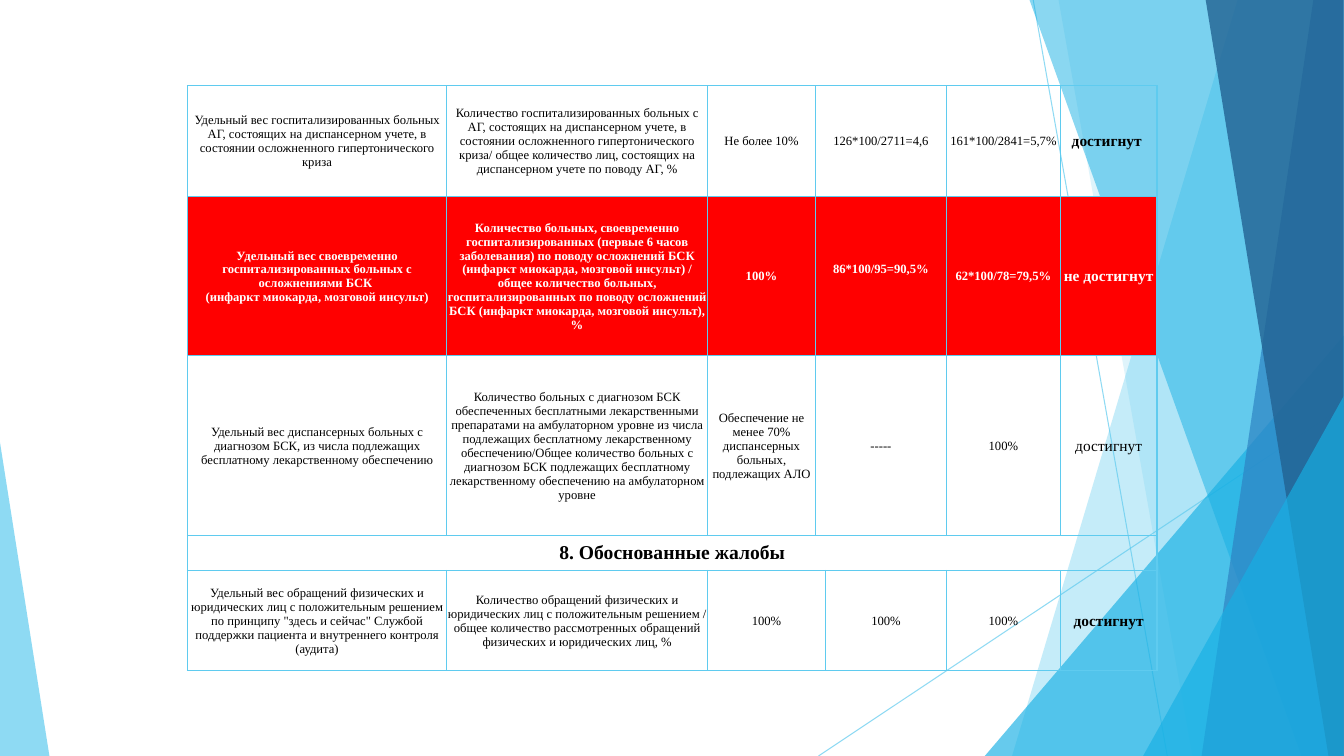
from dataclasses import dataclass

from lxml.etree import SubElement
from pptx import Presentation
from pptx.dml.color import RGBColor
from pptx.enum.shapes import MSO_CONNECTOR as Connector, MSO_SHAPE as Preset
from pptx.enum.text import MSO_ANCHOR as Anchor, PP_ALIGN as Align
from pptx.oxml import parse_xml
from pptx.oxml.ns import nsdecls, qn
from pptx.util import Inches, Pt


@dataclass(frozen=True)
class Theme:
    """Colours, font and type sizes of the slide."""
    sky: str = "5FCBEF"
    cyan: str = "17B0E4"
    blue: str = "2E83C3"
    navy: str = "226292"
    alarm: str = "FF0000"
    ink: str = "000000"
    paper: str = "FFFFFF"
    font: str = "Times New Roman"
    body: int = 9
    verdict: int = 11
    heading: int = 14
    hairline: float = 0.75
    border: float = 1


def units(count):
    """Convert grid columns or rows, ten to the inch, to a length."""
    return Inches(count / 10)


def assign(target, values):
    """Set every attribute named in a dict of format values."""
    for name, value in values.items():
        setattr(target, name, value)


class SlideBuilder:
    """Draws on one slide with one theme, measured in grid units."""

    def __init__(self, slide, theme):
        """Keep the slide and its theme."""
        self.slide, self.theme = slide, theme

    def tint(self, color_format, color, opacity):
        """Colour a fill or line with an opacity in percent."""
        color_format.fore_color.rgb = RGBColor.from_string(color)
        rgb = color_format._xPr.find(".//" + qn("a:srgbClr"))
        SubElement(rgb, qn("a:alpha")).set("val", str(opacity * 1000))

    def paint(self, facet, color, opacity):
        """Give a shape a translucent fill without line or shadow."""
        facet.shadow.inherit = False
        facet.fill.solid()
        self.tint(facet.fill, color, opacity)
        facet.line.fill.background()

    def ray(self, start, end, opacity):
        """Draw a thin translucent line."""
        ray = self.slide.shapes.add_connector(
            Connector.STRAIGHT, *map(units, start + end))
        ray.line.width = Pt(self.theme.hairline)
        ray.line.fill.solid()
        self.tint(ray.line.fill, self.theme.sky, opacity)
        SubElement(ray._element.spPr, qn("a:effectLst"))

    def shard(self, top_left, bottom_left, color, opacity):
        """Draw a facet that runs from a slanted edge to the right side."""
        corners = [(top_left, -0.1), (133.3, -0.1), (133.3, 75), (bottom_left, 75)]
        start, *others = [tuple(map(units, corner)) for corner in corners]
        outline = self.slide.shapes.build_freeform(*start, scale=1.0)
        outline.add_line_segments(others, close=True)
        self.paint(outline.convert_to_shape(), color, opacity)

    def wedge(self, left, top, width, apex, color, opacity):
        """Draw a triangle that stands on the bottom edge."""
        wedge = self.slide.shapes.add_shape(
            Preset.ISOSCELES_TRIANGLE, *map(units, (left, top, width, 75 - top)))
        wedge.adjustments[0] = apex
        self.paint(wedge, color, opacity)

    def frame(self, cell):
        """Set the insets, the fill and the four borders of a cell."""
        assign(cell, {"margin_left": units(0.1), "margin_right": units(0.1),
                      "margin_top": units(0.1), "margin_bottom": 0,
                      "vertical_anchor": Anchor.MIDDLE})
        cell.fill.background()
        for position, side in enumerate("LRTB"):
            cell._tc.tcPr.insert(position, parse_xml(
                f'<a:ln{side} {nsdecls("a")} w="{Pt(self.theme.border)}"><a:solidFill>'
                f'<a:srgbClr val="{self.theme.sky}"/></a:solidFill></a:ln{side}>'))

    def letter(self, cell, wording, size, bold, color):
        """Put centred paragraphs into a cell."""
        cell.text_frame.text = wording
        for paragraph in cell.text_frame.paragraphs:
            paragraph.alignment = Align.CENTER
            for run in paragraph.runs:
                assign(run.font, {"name": self.theme.font, "size": Pt(size), "bold": bold})
                run.font.color.rgb = RGBColor.from_string(color)

    def table(self, left, top, widths, heights):
        """Add a framed table without banding."""
        grid = self.slide.shapes.add_table(
            len(heights), len(widths),
            *map(units, (left, top, sum(widths), sum(heights)))).table
        assign(grid, {"first_row": False, "horz_banding": False})
        for column, width in zip(grid.columns, widths):
            column.width = units(width)
        for row, height in zip(grid.rows, heights):
            row.height = units(height)
        for cell in grid.iter_cells():
            self.frame(cell)
        return grid

    def indicator(self, grid, row, starts, wordings, missed=False, verdict_bold=True):
        """Fill a row of the table whose cells begin at the given columns."""
        ends = starts[1:] + [len(grid.columns)]
        for start, end, wording in zip(starts, ends, wordings):
            cell = grid.cell(row, start)
            if end - start > 1:
                cell.merge(grid.cell(row, end - 1))
            verdict = start == len(grid.columns) - 1
            self.letter(cell, wording,
                        self.theme.verdict if verdict else self.theme.body,
                        missed or (verdict and verdict_bold),
                        self.theme.paper if missed else self.theme.ink)
            if missed:
                cell.fill.solid()
                cell.fill.fore_color.rgb = RGBColor.from_string(self.theme.alarm)

    def section(self, grid, row, wording):
        """Put a heading across a whole row of the table."""
        heading = grid.cell(row, 0)
        heading.merge(grid.cell(row, len(grid.columns) - 1))
        self.letter(heading, wording, self.theme.heading, True, self.theme.ink)


WIDE_RESULT = [0, 1, 2, 3, 5, 6]
WIDE_TARGET = [0, 1, 2, 4, 5, 6]

HYPERTENSION = [
    "Удельный вес госпитализированных больных АГ, состоящих на диспансерном учете, в состоянии осложненного гипертонического криза",
    "Количество госпитализированных больных с АГ, состоящих на диспансерном учете, в состоянии осложненного гипертонического криза/ общее количество лиц, состоящих на диспансерном учете по поводу АГ, %",
    "Не более 10%", "126*100/2711=4,6", "161*100/2841=5,7%", "достигнут "]
TIMELY_ADMISSION = [
    "Удельный вес своевременно госпитализированных больных с осложнениями БСК \n(инфаркт миокарда, мозговой инсульт)",
    "Количество больных, своевременно госпитализированных (первые 6 часов заболевания) по поводу осложнений БСК (инфаркт миокарда, мозговой инсульт) / общее количество больных, госпитализированных по поводу осложнений БСК (инфаркт миокарда, мозговой инсульт), %",
    "100%", "86*100/95=90,5%", "62*100/78=79,5%", "не достигнут"]
FREE_MEDICINE = [
    "Удельный вес диспансерных больных с диагнозом БСК, из числа подлежащих бесплатному лекарственному обеспечению",
    "Количество больных с диагнозом БСК обеспеченных бесплатными лекарственными препаратами на амбулаторном уровне из числа подлежащих бесплатному лекарственному обеспечению/Общее количество больных с диагнозом БСК подлежащих бесплатному лекарственному обеспечению на амбулаторном уровне",
    "Обеспечение не менее 70% диспансерных больных, подлежащих АЛО",
    "-----", "100%", "достигнут"]
COMPLAINTS = [
    "Удельный вес обращений физических и юридических лиц с положительным решением по принципу \"здесь и сейчас\" Службой поддержки пациента и внутреннего контроля (аудита)",
    "Количество обращений физических и юридических лиц с положительным решением / общее количество рассмотренных обращений физических и юридических лиц, %",
    "100%", "100%", "100%", "достигнут"]


def main():
    """Build the slide of quality indicators and save it."""
    deck = Presentation()
    assign(deck, {"slide_width": units(133.33), "slide_height": units(75)})
    theme = Theme()
    page = SlideBuilder(deck.slides.add_slide(deck.slide_layouts[6]), theme)

    page.ray((102.5, 0), (115.8, 75), 70)
    page.ray((133.3, 40.3), (81.2, 75), 70)
    page.shard(122.8, 100.4, theme.sky, 36)
    page.shard(105, 118.3, theme.sky, 20)
    page.wedge(97.7, 33.3, 35.6, 1, theme.cyan, 66)
    page.shard(102.1, 129.1, theme.cyan, 50)
    page.shard(130.3, 119.2, theme.blue, 70)
    page.shard(119.6, 131.8, theme.navy, 80)
    page.wedge(113.4, 39.3, 19.9, 1, theme.cyan, 66)
    page.wedge(0, 43.9, 4.9, 0, theme.sky, 70)

    indicators = page.table(18.6, 8.5, [25.7, 25.9, 10.7, 1, 12, 11.3, 9.6],
                            [11, 15.8, 17.8, 3.5, 9.9])
    page.indicator(indicators, 0, WIDE_RESULT, HYPERTENSION)
    page.indicator(indicators, 1, WIDE_RESULT, TIMELY_ADMISSION, missed=True)
    indicators.cell(1, 3).margin_bottom = units(1.4)
    page.indicator(indicators, 2, WIDE_RESULT, FREE_MEDICINE, verdict_bold=False)
    page.section(indicators, 3, "8. Обоснованные жалобы")
    page.indicator(indicators, 4, WIDE_TARGET, COMPLAINTS)
    deck.save("out.pptx")


if __name__ == "__main__":
    main()
